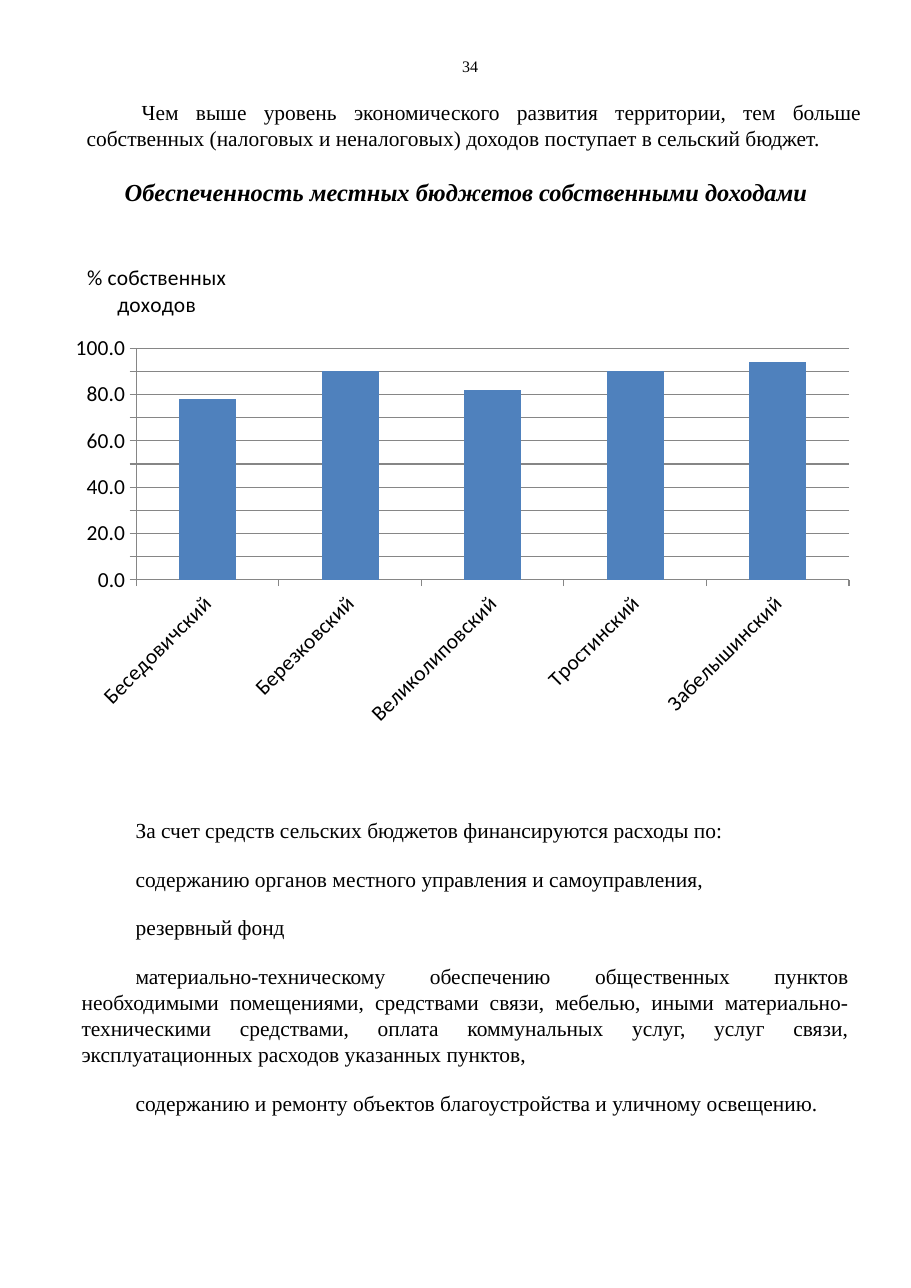
from lxml.etree import SubElement
from pptx import Presentation
from pptx.chart.data import CategoryChartData as ChartData
from pptx.dml.color import RGBColor
from pptx.enum.chart import XL_CHART_TYPE as ChartType, XL_TICK_MARK as Tick
from pptx.enum.text import MSO_ANCHOR as Anchor, MSO_AUTO_SIZE as AutoSize, PP_ALIGN as Align
from pptx.oxml import parse_xml
from pptx.oxml.ns import nsdecls, qn
from pptx.util import Pt

SERIF, SANS = "Times New Roman", "Calibri"
BLACK, BLUE, GRID = "000000", "4F81BD", "868686"

INTRO = ("Чем выше уровень экономического развития территории, тем больше собственных "
         "(налоговых и неналоговых) доходов поступает в сельский бюджет.")
HEADING = "Обеспеченность местных бюджетов собственными доходами"
EXPENSES = [
    "За счет средств сельских бюджетов финансируются расходы по:",
    "содержанию органов местного управления и самоуправления,",
    "резервный фонд",
    "материально-техническому обеспечению общественных пунктов необходимыми помещениями, "
    "средствами связи, мебелью, иными материально-техническими средствами, оплата "
    "коммунальных услуг, услуг связи, эксплуатационных расходов указанных пунктов,",
    "содержанию и ремонту объектов благоустройства и уличному освещению.",
]
OWN_INCOME = {"Беседовичский": 78, "Березковский": 90, "Великолиповский": 82,
              "Тростинский": 90, "Забелышинский": 94}


def color(hex_value):
    """Turn a hex string into a colour."""
    return RGBColor.from_string(hex_value)


def style_font(font, name, size, bold=False, italic=False):
    """Set the typeface, size and weight of black text."""
    font.name, font.size, font.bold, font.italic = name, Pt(size), bold, italic
    font.color.rgb = color(BLACK)


def fill_text(holder, box, lines, size, align, leading=None, after=0, indent=0,
              wrap=True, bold=False, italic=False):
    """Move a text holder to its box and write unbulleted paragraphs in it."""
    holder.left, holder.top, holder.width, holder.height = map(Pt, box)
    frame = holder.text_frame
    frame.text = "\n".join(lines)
    frame.word_wrap, frame.auto_size = wrap, AutoSize.NONE
    frame.vertical_anchor = Anchor.TOP
    frame.margin_left = frame.margin_top = frame.margin_right = frame.margin_bottom = 0
    for paragraph in frame.paragraphs:
        paragraph.alignment = align
        paragraph.space_before, paragraph.space_after = Pt(0), Pt(after)
        if leading:
            paragraph.line_spacing = Pt(leading)
        properties = paragraph._p.get_or_add_pPr()
        properties.set("marL", "0")
        properties.set("indent", str(Pt(indent)))
        SubElement(properties, qn("a:buNone"))
        for run in paragraph.runs:
            style_font(run.font, SERIF, size, bold, italic)


def fix_layout(parent, index, **fractions):
    """Give a chart part a manual layout in fractions of the chart."""
    for automatic in parent.xpath("c:layout"):
        parent.remove(automatic)
    modes = "".join(f'<c:{axis}Mode val="edge"/>' for axis in "xy")
    places = "".join(f'<c:{key} val="{value}"/>' for key, value in fractions.items())
    target = '<c:layoutTarget val="inner"/>' if "w" in fractions else ""
    parent.insert(index, parse_xml(
        f'<c:layout {nsdecls("c")}><c:manualLayout>{target}{modes}{places}'
        "</c:manualLayout></c:layout>"))


def add_income_chart(slide, box):
    """Draw the columns of own income by village council."""
    income = ChartData(number_format="0")
    income.categories = list(OWN_INCOME)
    income.add_series("Series 1", list(OWN_INCOME.values()))
    chart = slide.shapes.add_chart(ChartType.COLUMN_CLUSTERED, *map(Pt, box), income).chart
    style_font(chart.font, SANS, 18)
    chart.has_legend = False

    caption = chart.chart_title.text_frame
    caption.text = "% собственных\nдоходов"
    for paragraph in caption.paragraphs:
        for run in paragraph.runs:
            style_font(run.font, SANS, 14)

    columns = chart.plots[0]
    columns.gap_width, columns.vary_by_categories = 150, False
    columns.series[0].format.fill.solid()
    columns.series[0].format.fill.fore_color.rgb = color(BLUE)

    councils, percent = chart.category_axis, chart.value_axis
    percent.minimum_scale, percent.maximum_scale, percent.major_unit = 0, 100, 10
    percent.has_major_gridlines = True
    percent.tick_labels.number_format = "#,##0.0"
    percent.tick_labels.number_format_is_linked = False
    for axis in (councils, percent):
        axis.major_tick_mark, axis.minor_tick_mark = Tick.OUTSIDE, Tick.NONE
        style_font(axis.tick_labels.font, SANS, 14)
    for line in (councils.format.line, percent.format.line, percent.major_gridlines.format.line):
        line.color.rgb, line.width = color(GRID), Pt(0.75)

    root = chart.element
    root.xpath(".//c:catAx/c:txPr/a:bodyPr")[0].set("rot", "-2700000")
    fix_layout(root.xpath("c:chart/c:title")[0], 1, x=0.03, y=0.03)
    fix_layout(root.xpath("c:chart/c:plotArea")[0], 0, x=0.095, y=0.21, w=0.885, h=0.47)


def build_page(deck):
    """Lay out the page number, introduction, heading, chart and expenses."""
    slide = deck.slides.add_slide(deck.slide_layouts[1])
    heading, expenses = slide.placeholders
    number, intro = (slide.shapes.add_textbox(0, 0, 0, 0) for _ in range(2))
    fill_text(number, (302, 36.7, 14, 11), ["34"], 10.5, Align.LEFT, wrap=False)
    fill_text(intro, (56.6, 64, 506.4, 50), [INTRO], 14, Align.JUSTIFY,
              leading=17.3, after=12.6, indent=36)
    fill_text(heading, (56.6, 116, 496, 22), [HEADING], 16, Align.CENTER,
              bold=True, italic=True)
    add_income_chart(slide, (39, 160, 526.5, 322))
    fill_text(expenses, (53.3, 534, 501.5, 261), EXPENSES, 14, Align.JUSTIFY,
              leading=17, after=14.7, indent=35.3)


def main():
    """Build and save the page."""
    deck = Presentation()
    deck.slide_width, deck.slide_height = Pt(595.4), Pt(841.7)
    build_page(deck)
    deck.save("out.pptx")


if __name__ == "__main__":
    main()
